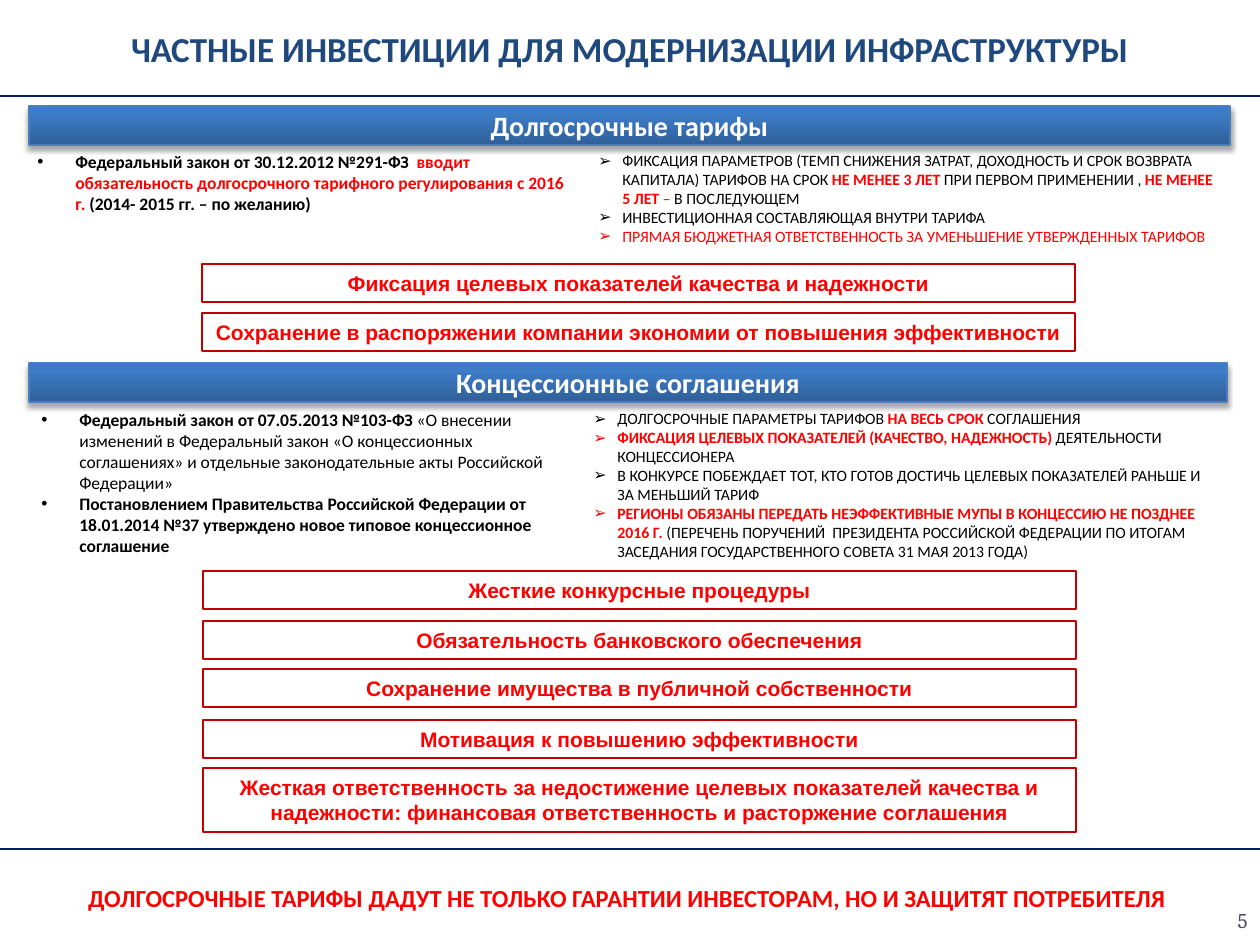
import pptx
import pptx.util
import pptx.dml.color
import pptx.enum.shapes
import pptx.enum.text
import pptx.oxml
import pptx.oxml.ns

SCALE = 914400 / 126
RED, BLACK, NAVY = "FF0000", "000000", "002060"
NAMESPACE = 'xmlns:a="http://schemas.openxmlformats.org/drawingml/2006/main"'
color = pptx.dml.color.RGBColor.from_string
align = pptx.enum.text.PP_ALIGN
anchors = pptx.enum.text.MSO_ANCHOR
fits = pptx.enum.text.MSO_AUTO_SIZE
rectangle = pptx.enum.shapes.MSO_SHAPE.RECTANGLE


def px(*lengths):
    return [pptx.util.Emu(round(length * SCALE)) for length in lengths]


def write(box, paragraphs, size=12, font="Calibri", fill=BLACK, bold=False,
          alignment=align.CENTER, anchor=anchors.TOP, fit=fits.NONE, bullet=None, indent=0):
    frame = box.text_frame
    frame.word_wrap = True
    frame.auto_size = fit
    frame.vertical_anchor = anchor
    if isinstance(paragraphs, str):
        paragraphs = [[(paragraphs, fill, bold)]]
    for index, spans in enumerate(paragraphs):
        para = frame.add_paragraph() if index else frame.paragraphs[0]
        para.alignment = alignment
        if bullet:
            properties = para._p.get_or_add_pPr()
            margin = px(indent)[0]
            properties.set("marL", str(margin))
            properties.set("indent", str(-margin))
            properties.append(pptx.oxml.parse_xml(f'<a:buFont {NAMESPACE} typeface="Arial"/>'))
            properties.append(pptx.oxml.parse_xml(f'<a:buChar {NAMESPACE} char="{bullet}"/>'))
        for text, span_color, span_bold in spans:
            span = para.add_run()
            span.text = text
            span.font.size = pptx.util.Pt(size)
            span.font.name = font
            span.font.bold = span_bold
            span.font.color.rgb = color(span_color)


deck = pptx.Presentation()
deck.slide_width, deck.slide_height = px(1260, 945)
page = deck.slides.add_slide(deck.slide_layouts[5])

title = page.shapes.title
title.left, title.top, title.width, title.height = px(0, 0, 1260, 96)
write(title, "ЧАСТНЫЕ ИНВЕСТИЦИИ ДЛЯ МОДЕРНИЗАЦИИ ИНФРАСТРУКТУРЫ",
      size=20, fill="1F497D", bold=True, anchor=anchors.MIDDLE)

for top in (96, 849):
    rule = page.shapes.add_connector(pptx.enum.shapes.MSO_CONNECTOR.STRAIGHT, *px(0, top, 1260, top))
    rule.line.color.rgb = color(NAVY)
    rule.line.width = pptx.util.Pt(1)
    rule._element.spPr.append(pptx.oxml.parse_xml(f"<a:effectLst {NAMESPACE}/>"))

for text, top, width in (("Долгосрочные тарифы", 106, 1201), ("Концессионные соглашения", 363, 1198)):
    header = page.shapes.add_shape(rectangle, *px(29, top, width, 39))
    header.fill.gradient()
    header.fill.gradient_angle = 90
    stops = header._element.spPr.find(".//" + pptx.oxml.ns.qn("a:gsLst"))
    for stop in list(stops):
        stops.remove(stop)
    for position, shade in ((0, "2F5F99"), (80, "3D7CC7"), (100, "3A7CCB")):
        stops.append(pptx.oxml.parse_xml(
            f'<a:gs {NAMESPACE} pos="{position * 1000}"><a:srgbClr val="{shade}"/></a:gs>'))
    header.line.color.rgb = color("4B7EBC")
    header.line.width = pptx.util.Pt(0.75)
    header._element.spPr.append(pptx.oxml.parse_xml(
        f'<a:effectLst {NAMESPACE}><a:outerShdw blurRad="39370" dist="22860" dir="5400000" rotWithShape="0">'
        '<a:srgbClr val="000000"><a:alpha val="35000"/></a:srgbClr></a:outerShdw></a:effectLst>'))
    write(header, text, size=16, fill="FFFFFF", bold=True, anchor=anchors.MIDDLE)

tariff_law = [
    [("Федеральный закон от 30.12.2012 №291-ФЗ", BLACK, True),
     ("  вводит обязательность долгосрочного тарифного регулирования с 2016 г.", RED, True),
     (" (2014- 2015 гг. – по желанию)", BLACK, True)],
]
tariff_terms = [
    [("ФИКСАЦИЯ ПАРАМЕТРОВ (ТЕМП СНИЖЕНИЯ ЗАТРАТ, ДОХОДНОСТЬ И СРОК ВОЗВРАТА КАПИТАЛА) "
      "ТАРИФОВ НА СРОК ", BLACK, False),
     ("НЕ МЕНЕЕ 3 ЛЕТ ", RED, True),
     ("ПРИ ПЕРВОМ ПРИМЕНЕНИИ , ", BLACK, False),
     ("НЕ МЕНЕЕ 5 ЛЕТ ", RED, True),
     ("– ", RED, False),
     ("В ПОСЛЕДУЮЩЕМ", BLACK, False)],
    [("ИНВЕСТИЦИОННАЯ СОСТАВЛЯЮЩАЯ ВНУТРИ ТАРИФА", BLACK, False)],
    [("ПРЯМАЯ БЮДЖЕТНАЯ ОТВЕТСТВЕННОСТЬ ЗА УМЕНЬШЕНИЕ УТВЕРЖДЕННЫХ ТАРИФОВ", RED, False)],
]
concession_laws = [
    [("Федеральный закон от 07.05.2013 №103-ФЗ ", BLACK, True),
     ("«О внесении изменений в Федеральный закон «О концессионных соглашениях» "
      "и отдельные законодательные акты Российской Федерации»", BLACK, False)],
    [("Постановлением Правительства Российской Федерации от 18.01.2014 №37 "
      "утверждено новое типовое концессионное соглашение", BLACK, True)],
]
concession_terms = [
    [("ДОЛГОСРОЧНЫЕ ПАРАМЕТРЫ ТАРИФОВ ", BLACK, False),
     ("НА ВЕСЬ СРОК ", RED, True),
     ("СОГЛАШЕНИЯ", BLACK, False)],
    [("ФИКСАЦИЯ ЦЕЛЕВЫХ ПОКАЗАТЕЛЕЙ (КАЧЕСТВО, НАДЕЖНОСТЬ) ", RED, True),
     ("ДЕЯТЕЛЬНОСТИ КОНЦЕССИОНЕРА", BLACK, False)],
    [("В КОНКУРСЕ ПОБЕЖДАЕТ ТОТ, КТО ГОТОВ ДОСТИЧЬ ЦЕЛЕВЫХ ПОКАЗАТЕЛЕЙ РАНЬШЕ "
      "И ЗА МЕНЬШИЙ ТАРИФ", BLACK, False)],
    [("РЕГИОНЫ ОБЯЗАНЫ ПЕРЕДАТЬ НЕЭФФЕКТИВНЫЕ МУПЫ В КОНЦЕССИЮ НЕ ПОЗДНЕЕ 2016 Г.", RED, True),
     (" (ПЕРЕЧЕНЬ ПОРУЧЕНИЙ  ПРЕЗИДЕНТА РОССИЙСКОЙ ФЕДЕРАЦИИ ПО ИТОГАМ ЗАСЕДАНИЯ "
      "ГОСУДАРСТВЕННОГО СОВЕТА 31 МАЯ 2013 ГОДА)", BLACK, False)],
]
law_format = dict(size=10, bullet="•", indent=38)
terms_format = dict(size=9, bullet="➢", indent=24)
for paragraphs, bounds, style in (
    (tariff_law, (25, 145, 552, 77), law_format),
    (tariff_terms, (586, 145, 650, 111), terms_format),
    (concession_laws, (29, 403, 552, 161), law_format),
    (concession_terms, (581, 403, 650, 165), terms_format),
):
    box = page.shapes.add_textbox(*px(*bounds))
    write(box, paragraphs, alignment=align.LEFT, fit=fits.SHAPE_TO_FIT_TEXT, **style)

for text, left, top, height in (
    ("Фиксация целевых показателей качества и надежности", 202, 264, 38),
    ("Сохранение в распоряжении компании экономии от повышения эффективности", 202, 313, 38),
    ("Жесткие конкурсные процедуры", 203, 571, 38),
    ("Обязательность банковского обеспечения", 203, 621, 38),
    ("Сохранение имущества в публичной собственности", 203, 669, 38),
    ("Мотивация к повышению эффективности", 203, 720, 38),
    ("Жесткая ответственность за недостижение целевых показателей качества и надежности: "
     "финансовая ответственность и расторжение соглашения", 203, 768, 64),
):
    effect = page.shapes.add_shape(rectangle, *px(left, top, 873, height))
    effect.shadow.inherit = False
    effect.fill.background()
    effect.line.color.rgb = color("C00000")
    effect.line.width = pptx.util.Pt(0.75)
    write(effect, text, font="Arial", fill=RED, bold=True, fit=fits.SHAPE_TO_FIT_TEXT)

conclusion = page.shapes.add_textbox(*px(0, 877, 1260, 43))
write(conclusion, "ДОЛГОСРОЧНЫЕ ТАРИФЫ ДАДУТ НЕ ТОЛЬКО ГАРАНТИИ ИНВЕСТОРАМ, НО И ЗАЩИТЯТ ПОТРЕБИТЕЛЯ ",
      size=14, fill=RED, bold=True, fit=fits.SHAPE_TO_FIT_TEXT)

page_number = page.shapes.add_textbox(*px(1092, 895, 168, 50))
write(page_number, "5", font="Cambria", fill="464653", alignment=align.RIGHT, anchor=anchors.MIDDLE)

deck.save("out.pptx")
